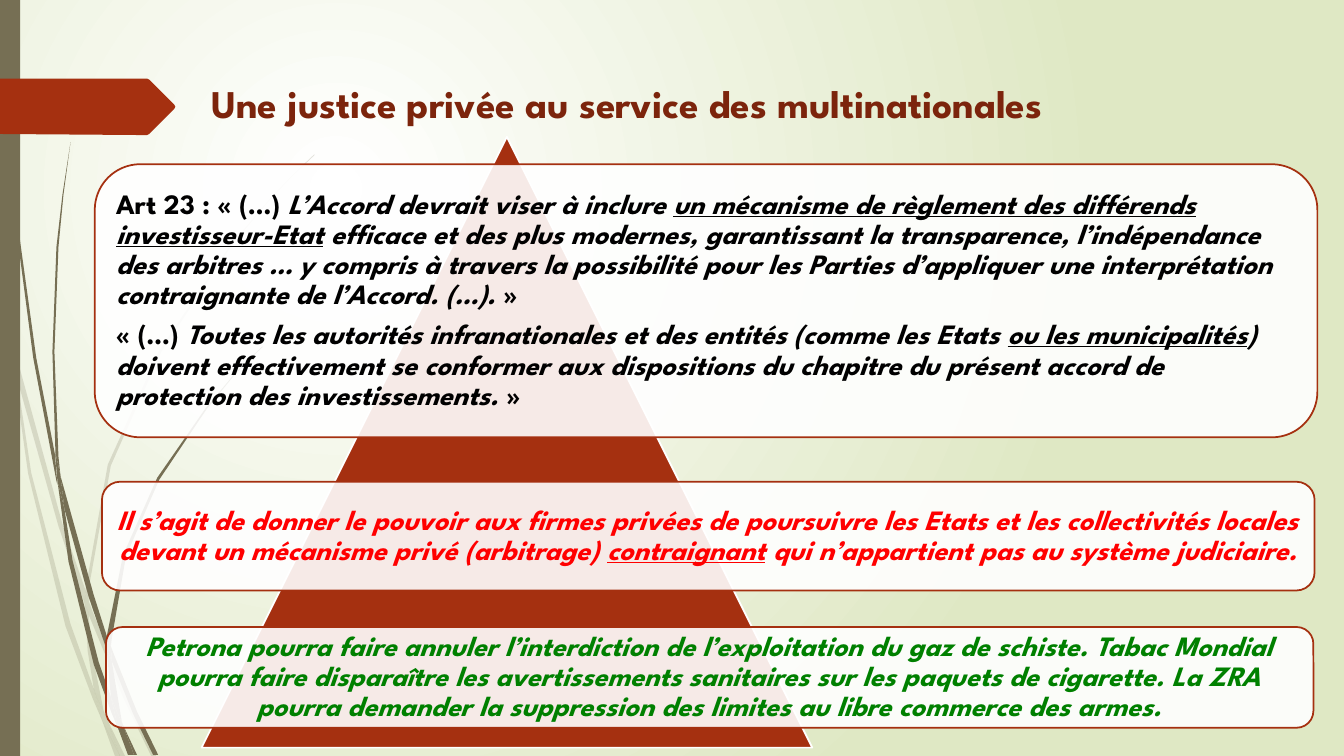
from lxml import etree
from pptx import Presentation
from pptx.dml.color import RGBColor
from pptx.enum.shapes import MSO_SHAPE
from pptx.enum.text import MSO_ANCHOR, MSO_AUTO_SIZE, PP_ALIGN
from pptx.oxml.ns import qn
from pptx.util import Cm, Pt

RECTANGLE = MSO_SHAPE.RECTANGLE
TRIANGLE = MSO_SHAPE.ISOSCELES_TRIANGLE
ROUNDED = MSO_SHAPE.ROUNDED_RECTANGLE
MIDDLE = MSO_ANCHOR.MIDDLE
NO_AUTOFIT = MSO_AUTO_SIZE.NONE
LEFT, CENTER = PP_ALIGN.LEFT, PP_ALIGN.CENTER

COLORS = {
    "white": "FFFFFF", "sage": "DFE8C4", "olive": "766F54", "rust": "A53010",
    "title": "7C240C", "black": "000000", "red": "FF0000", "green": "008000",
}

# Outlines of the grass blades and the banner, in hundredths of an inch
PALE_BLADES = [
    [(11, 350), (9, 322), (0, 282), (0, 299), (10, 344)],
    [(58, 522), (84, 599), (85, 586), (62, 520), (14, 345), (17, 376)],
    [(92, 607), (88, 596), (88, 610), (123, 694), (150, 750), (155, 750), (127, 692)],
    [(119, 750), (124, 750), (105, 711)],
    [(93, 683), (70, 619), (31, 469), (17, 376), (11, 350), (28, 470), (65, 621),
     (92, 693), (101, 714), (99, 707)],
    [(84, 599), (87, 646), (93, 683), (96, 692), (105, 711), (103, 706), (91, 646),
     (88, 610), (88, 608)],
    [(88, 584), (110, 462), (160, 349), (229, 245), (268, 198), (290, 175), (312, 154),
     (312, 153), (289, 175), (268, 197), (228, 244), (158, 348), (107, 461), (85, 584),
     (85, 586), (88, 596)],
    [(101, 714), (114, 750), (119, 750)],
    [(88, 608), (88, 610), (88, 596), (85, 586), (84, 599)],
    [(96, 692), (93, 683), (99, 707), (101, 714), (119, 750), (105, 711)],
]
DARK_BLADES = [
    [(7, 110), (17, 233), (33, 355), (56, 477), (57, 481), (55, 457), (55, 453),
     (36, 355), (19, 232), (8, 109), (5, 48), (4, 0), (3, 0), (4, 48)],
    [(88, 592), (106, 645), (106, 633), (106, 631), (93, 590), (60, 472), (64, 505)],
    [(113, 649), (110, 641), (111, 656), (132, 708), (152, 749), (157, 749), (136, 706)],
    [(110, 691), (98, 657), (72, 556), (64, 505), (57, 477), (68, 557), (93, 659),
     (111, 708), (117, 722), (116, 717)],
    [(60, 472), (58, 453), (54, 349), (58, 245), (63, 193), (70, 141), (62, 193),
     (56, 245), (52, 349), (55, 449)],
    [(133, 749), (136, 749), (122, 719)],
    [(57, 477), (64, 505), (60, 472), (55, 449), (55, 453)],
    [(111, 633), (125, 552), (158, 476), (205, 406), (231, 374), (245, 359), (261, 344),
     (260, 344), (245, 358), (231, 373), (204, 405), (156, 474), (122, 551), (106, 631),
     (110, 641)],
    [(117, 722), (127, 749), (131, 749)],
    [(106, 645), (110, 691), (116, 706), (122, 719), (121, 716), (111, 656), (109, 651)],
    [(106, 645), (109, 651), (111, 656), (110, 641), (106, 631), (106, 633)],
    [(116, 706), (110, 691), (116, 717), (117, 722), (130, 749), (133, 749), (122, 719)],
]
BANNER = [(173, 108), (148, 133), (146, 134), (136, 134), (0, 133), (0, 78), (146, 78),
          (148, 79), (173, 104), (174, 106)]

# Text boxes: place in cm, colour, alignment, paragraphs of (text, style) runs
# Style letters: i italic, u underlined
TEXT_BOXES = [
    ((2.39, 4.14, 30.81, 6.88), "black", LEFT, [
        [("Art 23 : « (…) ", ""),
         ("L’Accord devrait viser à inclure ", "i"),
         ("un mécanisme de règlement des différends investisseur-Etat", "iu"),
         (" efficace et des plus modernes, garantissant la transparence, l’indépendance "
          "des arbitres … y compris à travers la possibilité pour les Parties "
          "d’appliquer une interprétation contraignante de l’Accord. (…).", "i"),
         (" »", "")],
        [("« (…) ", ""),
         ("Toutes les autorités infranationales et des entités (comme les Etats ", "i"),
         ("ou les municipalités", "iu"),
         (") doivent effectivement se conformer aux dispositions du chapitre du présent "
          "accord de protection des investissements.", "i"),
         (" »", "")],
    ]),
    ((2.57, 12.14, 30.56, 2.74), "red", CENTER, [
        [("Il s’agit de donner le pouvoir aux firmes privées de poursuivre les Etats et "
          "les collectivités locales devant un mécanisme privé (arbitrage) ", "i"),
         ("contraignant", "iu"),
         (" qui n’appartient pas au système judiciaire.", "i")],
    ]),
    ((2.67, 15.8, 30.43, 2.54), "green", CENTER, [
        [("Petrona pourra faire annuler l’interdiction de l’exploitation du gaz de "
          "schiste. Tabac Mondial pourra faire disparaître les avertissements sanitaires "
          "sur les paquets de cigarette. La ZRA pourra demander la suppression des "
          "limites au libre commerce des armes.", "i")],
    ]),
]


class SlideBuilder:
    font = "League Spartan"
    unit = Cm(2.54) / 100

    def __init__(self, page):
        self.page = page

    def color(self, name):
        return RGBColor.from_string(COLORS[name])

    def background(self, inner, outer):
        fill = self.page.background.fill
        fill.gradient()
        for stop, name in zip(fill.gradient_stops, (inner, outer)):
            stop.color.rgb = self.color(name)
        linear = next(self.page.element.iter(qn("a:lin")))
        radial = etree.Element(qn("a:path"), path="circle")
        etree.SubElement(radial, qn("a:fillToRect"), l="50000", t="50000",
                         r="100000", b="100000")
        linear.getparent().replace(linear, radial)

    def paint(self, shape, fill, line=None, opacity=100):
        shape.shadow.inherit = False
        shape.fill.solid()
        shape.fill.fore_color.rgb = self.color(fill)
        if opacity < 100:
            tint = shape.element.spPr.find(qn("a:solidFill"))[0]
            etree.SubElement(tint, qn("a:alpha"), val=str(opacity * 1000))
        if line:
            shape.line.color.rgb = self.color(line)
            shape.line.width = Pt(1.25)
        else:
            shape.line.fill.background()

    def outline(self, points, fill, opacity=100):
        builder = self.page.shapes.build_freeform(*points[0], scale=self.unit)
        builder.add_line_segments(points[1:], close=True)
        self.paint(builder.convert_to_shape(), fill, opacity=opacity)

    def shape(self, kind, place, fill, line=None, opacity=100):
        shape = self.page.shapes.add_shape(kind, *map(Cm, place))
        self.paint(shape, fill, line, opacity)
        return shape

    def span(self, para, text, size, color, style=""):
        span = para.add_run()
        span.text = text
        font = span.font
        font.name, font.size, font.bold = self.font, Pt(size), True
        font.italic, font.underline = "i" in style, "u" in style
        font.color.rgb = self.color(color)

    def title(self, place, text):
        box = self.page.shapes.title
        box.left, box.top, box.width, box.height = map(Cm, place)
        frame = box.text_frame
        frame.auto_size, frame.vertical_anchor = NO_AUTOFIT, MIDDLE
        para = frame.paragraphs[0]
        para.alignment = LEFT
        self.span(para, text, 28, "title")

    def text_box(self, place, color, alignment, paragraphs):
        box = self.shape(ROUNDED, place, "white", "rust", 90)
        frame = box.text_frame
        frame.word_wrap, frame.vertical_anchor = True, MIDDLE
        frame.margin_left = frame.margin_right = Cm(0.2)
        frame.margin_top = frame.margin_bottom = Cm(0.2)
        for index, spans in enumerate(paragraphs):
            para = frame.add_paragraph() if index else frame.paragraphs[0]
            para.alignment, para.line_spacing = alignment, 0.9
            para.space_after = Pt(7)
            for text, style in spans:
                self.span(para, text, 20, color, style)


def main():
    deck = Presentation()
    deck.slide_width, deck.slide_height = Cm(33.87), Cm(19.05)
    builder = SlideBuilder(deck.slides.add_slide(deck.slide_layouts[5]))

    # Backdrop
    builder.background("white", "sage")
    for blade in PALE_BLADES:
        builder.outline(blade, "olive", 20)
    for blade in DARK_BLADES:
        builder.outline(blade, "olive")
    builder.shape(RECTANGLE, (0, 0, 0.51, 19.05), "olive")
    builder.outline(BANNER, "rust")

    # Title
    builder.title((5.08, 1.73, 26.87, 1.73),
                  "Une justice privée au service des multinationales")

    # Pyramid with its text boxes
    builder.shape(TRIANGLE, (5.08, 3.45, 15.39, 15.39), "rust", "white")
    for text_box in TEXT_BOXES:
        builder.text_box(*text_box)

    deck.save("out.pptx")


if __name__ == "__main__":
    main()
